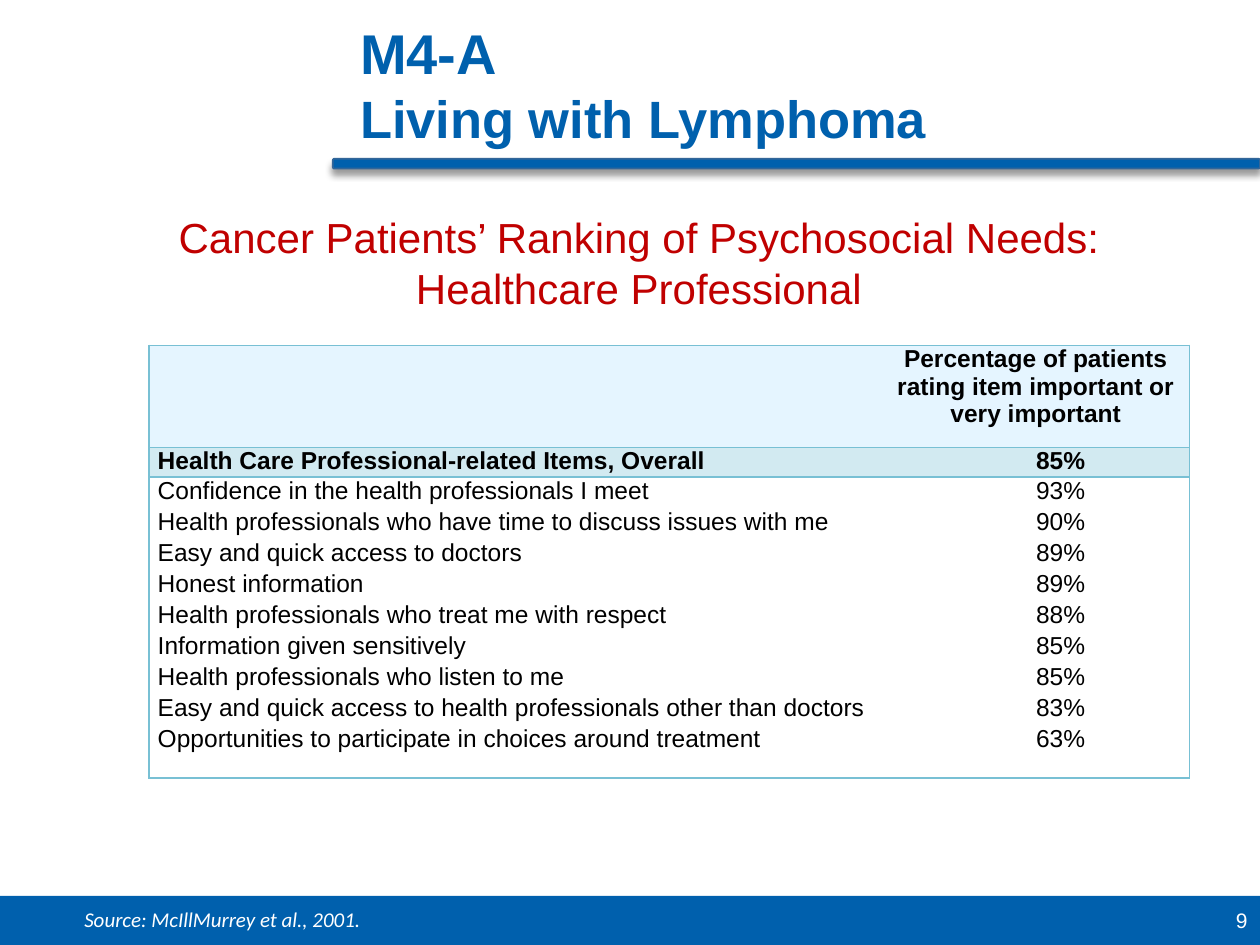
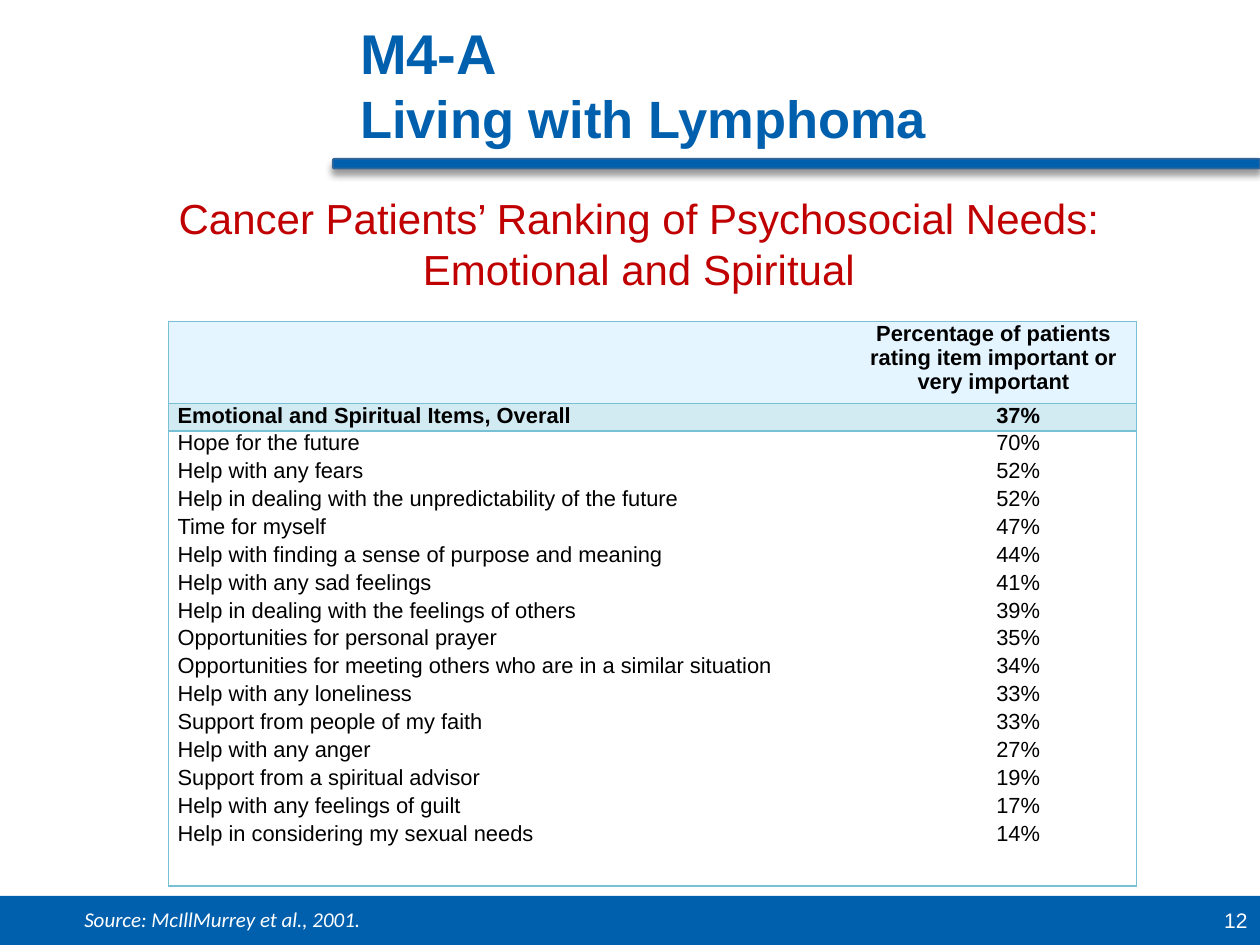
from dataclasses import dataclass
from typing import Optional

from lxml.etree import SubElement
from pptx import Presentation
from pptx.dml.color import RGBColor
from pptx.enum.shapes import MSO_SHAPE as Preset
from pptx.enum.text import MSO_ANCHOR as Anchor, PP_ALIGN as Align
from pptx.oxml.ns import qn
from pptx.util import Cm, Pt

COLORS = {
    "blue": "0060AD",
    "rule_edge": "336699",
    "red": "C00000",
    "white": "FFFFFF",
    "black": "000000",
    "border": "78C0D4",
    "header": "E5F5FF",
    "overall": "D2EAF1",
}
HEADING = "Percentage of patients rating item important or very important"
SOURCE = "Source: McIllMurrey et al., 2001."


@dataclass(frozen=True)
class Box:
    left: float
    top: float
    width: float
    height: float

    def lengths(self) -> list:
        return [Cm(value) for value in (self.left, self.top, self.width, self.height)]


@dataclass(frozen=True)
class TextStyle:
    size: float
    color: str
    font: str = "Arial"
    bold: bool = False
    italic: bool = False


@dataclass(frozen=True)
class RankingSlide:
    number: int
    subject: str
    subject_top: float
    table_left: float
    table_top: float
    columns: tuple
    rows: tuple
    size: float
    overall: tuple
    items: tuple


FOOTER = Box(0, 18.06, 25.4, 0.99)
NUMBER = Box(19.48, 18.06, 5.92, 0.99)
RULE = Box(6.71, 3.2, 18.69, 0.2)
TITLE = Box(7.01, 0.43, 18.39, 2.51)
CITATION = Box(1.45, 18.16, 19.38, 0.76)

RANKINGS = (
    RankingSlide(
        9, "Healthcare Professional", 4.22, 3.0, 6.96,
        (14.78, 6.2), (2.06, 0.58, 6.07), 14,
        ("Health Care Professional-related Items, Overall", 85),
        (
            ("Confidence in the health professionals I meet", 93),
            ("Health professionals who have time to discuss issues with me", 90),
            ("Easy and quick access to doctors", 89),
            ("Honest information", 89),
            ("Health professionals who treat me with respect", 88),
            ("Information given sensitively", 85),
            ("Health professionals who listen to me", 85),
            ("Easy and quick access to health professionals other than doctors", 83),
            ("Opportunities to participate in choices around treatment", 63),
        ),
    ),
    RankingSlide(
        12, "Emotional and Spiritual", 3.84, 3.4, 6.48,
        (13.74, 5.77), (1.65, 0.56, 9.17), 12.5,
        ("Emotional and Spiritual Items, Overall", 37),
        (
            ("Hope for the future", 70),
            ("Help with any fears", 52),
            ("Help in dealing with the unpredictability of the future", 52),
            ("Time for myself", 47),
            ("Help with finding a sense of purpose and meaning", 44),
            ("Help with any sad feelings", 41),
            ("Help in dealing with the feelings of others", 39),
            ("Opportunities for personal prayer", 35),
            ("Opportunities for meeting others who are in a similar situation", 34),
            ("Help with any loneliness", 33),
            ("Support from people of my faith", 33),
            ("Help with any anger", 27),
            ("Support from a spiritual advisor", 19),
            ("Help with any feelings of guilt", 17),
            ("Help in considering my sexual needs", 14),
        ),
    ),
)


def rgb(name: str) -> RGBColor:
    return RGBColor.from_string(COLORS[name])


def add_run(paragraph, text: str, style: TextStyle) -> None:
    run = paragraph.add_run()
    run.text = text
    font = run.font
    font.name, font.size = style.font, Pt(style.size)
    font.bold, font.italic = style.bold, style.italic
    font.color.rgb = rgb(style.color)


def add_text(slide, box: Box, align: Align, anchor: Anchor):
    frame = slide.shapes.add_textbox(*box.lengths()).text_frame
    frame.word_wrap = True
    frame.vertical_anchor = anchor
    paragraph = frame.paragraphs[0]
    paragraph.alignment = align
    return paragraph


def add_bar(slide, preset: Preset, box: Box, edge: Optional[str] = None):
    shape = slide.shapes.add_shape(preset, *box.lengths())
    shape.shadow.inherit = False
    shape.fill.solid()
    shape.fill.fore_color.rgb = rgb("blue")
    if edge:
        shape.line.color.rgb = rgb(edge)
        shape.line.width = Pt(1)
    else:
        shape.line.fill.background()
    return shape


def add_shadow(shape) -> None:
    effects = shape._element.spPr.find(qn("a:effectLst"))
    shadow = SubElement(effects, qn("a:outerShdw"), blurRad=str(Pt(4)),
                        dist=str(Pt(3)), dir="5400000", rotWithShape="0")
    color = SubElement(shadow, qn("a:srgbClr"), val=COLORS["black"])
    SubElement(color, qn("a:alpha"), val="40000")


def add_frame(slide, number: int) -> None:
    add_bar(slide, Preset.RECTANGLE, FOOTER)
    paragraph = add_text(slide, NUMBER, Align.RIGHT, Anchor.MIDDLE)
    add_run(paragraph, str(number), TextStyle(12, "white"))
    add_shadow(add_bar(slide, Preset.ROUNDED_RECTANGLE, RULE, "rule_edge"))
    title = add_text(slide, TITLE, Align.LEFT, Anchor.MIDDLE)
    add_run(title, "M4-A", TextStyle(32, "blue", bold=True))
    title.add_line_break()
    add_run(title, "Living with Lymphoma", TextStyle(30, "blue", bold=True))
    citation = add_text(slide, CITATION, Align.LEFT, Anchor.TOP)
    add_run(citation, SOURCE, TextStyle(12, "white", "Calibri", italic=True))


def set_borders(cell, visible: str) -> None:
    properties = cell._tc.get_or_add_tcPr()
    for side in "LRTB":
        line = SubElement(properties, qn(f"a:ln{side}"), w=str(Pt(1)))
        if side in visible:
            fill = SubElement(line, qn("a:solidFill"))
            SubElement(fill, qn("a:srgbClr"), val=COLORS["border"])
        else:
            SubElement(line, qn("a:noFill"))


def fill_cell(cell, texts: list, style: TextStyle, align: Align, indented: bool) -> None:
    cell.margin_left = cell.margin_right = Cm(0.18)
    cell.margin_top = cell.margin_bottom = 0
    frame = cell.text_frame
    for index, text in enumerate(texts):
        paragraph = frame.add_paragraph() if index else frame.paragraphs[0]
        paragraph.alignment = align
        if index:
            paragraph.space_before = Pt(2)
        if indented:
            properties = paragraph._p.get_or_add_pPr()
            properties.set("marL", str(Cm(2)))
            properties.set("indent", str(Cm(-1)))
        add_run(paragraph, text, style)


def add_ranking_table(slide, ranking: RankingSlide) -> None:
    box = Box(ranking.table_left, ranking.table_top, sum(ranking.columns), sum(ranking.rows))
    table = slide.shapes.add_table(3, 2, *box.lengths()).table
    table.first_row = table.horz_banding = False
    for column, width in zip(table.columns, ranking.columns):
        column.width = Cm(width)
    for row, height in zip(table.rows, ranking.rows):
        row.height = Cm(height)

    bold = TextStyle(ranking.size, "black", bold=True)
    plain = TextStyle(ranking.size, "black")
    sections = (
        ([], [HEADING], bold, "header"),
        ([ranking.overall[0]], [f"{ranking.overall[1]}%"], bold, "overall"),
        ([name for name, _ in ranking.items],
         [f"{share}%" for _, share in ranking.items], plain, None),
    )
    for index, (names, values, style, color) in enumerate(sections):
        name_cell, value_cell = table.cell(index, 0), table.cell(index, 1)
        fill_cell(name_cell, names, style, Align.LEFT, False)
        fill_cell(value_cell, values, style, Align.CENTER, index > 0)
        for cell, borders in ((name_cell, "LTB"), (value_cell, "RTB")):
            set_borders(cell, borders)
            if color:
                cell.fill.solid()
                cell.fill.fore_color.rgb = rgb(color)
            else:
                cell.fill.background()


def add_ranking_slide(presentation, ranking: RankingSlide) -> None:
    slide = presentation.slides.add_slide(presentation.slide_layouts[6])
    add_frame(slide, ranking.number)
    subject_box = Box(1.45, ranking.subject_top, 22.86, 2.13)
    paragraph = add_text(slide, subject_box, Align.CENTER, Anchor.MIDDLE)
    add_run(paragraph, f"Cancer Patients’ Ranking of Psychosocial Needs: {ranking.subject}",
            TextStyle(24, "red"))
    add_ranking_table(slide, ranking)


def main() -> None:
    presentation = Presentation()
    presentation.slide_width, presentation.slide_height = Cm(25.4), Cm(19.05)
    for ranking in RANKINGS:
        add_ranking_slide(presentation, ranking)
    presentation.save("out.pptx")


if __name__ == "__main__":
    main()
